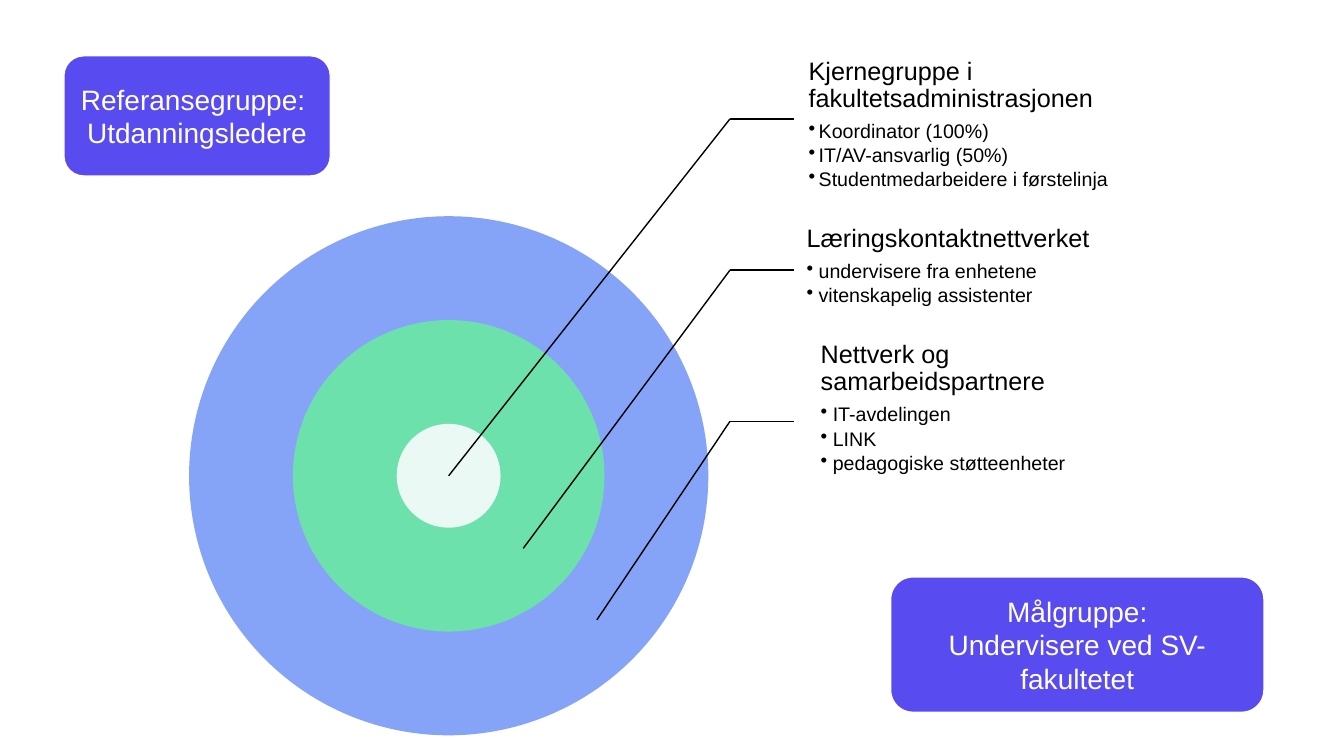
import pptx
import pptx.util
import pptx.dml.color
import pptx.enum.shapes
import pptx.enum.text
import pptx.oxml.ns
import lxml.etree

Inches = pptx.util.Inches
Pt = pptx.util.Pt
RGBColor = pptx.dml.color.RGBColor
Shape = pptx.enum.shapes.MSO_SHAPE
Align = pptx.enum.text.PP_ALIGN
Anchor = pptx.enum.text.MSO_ANCHOR
qn = pptx.oxml.ns.qn

BLACK = RGBColor(0x00, 0x00, 0x00)
WHITE = RGBColor(0xFF, 0xFF, 0xFF)
BLUE = RGBColor(0x86, 0xA4, 0xF7)
GREEN = RGBColor(0x6C, 0xE1, 0xAB)
MINT = RGBColor(0xEA, 0xF9, 0xF3)
VIOLET = RGBColor(0x58, 0x4B, 0xF0)

MID_X, MID_Y = 4.45, 4.72
RINGS = [(5.15, BLUE), (3.09, GREEN), (1.03, MINT)]
BEND, END = 7.24, 7.88

GROUPS = [
    ("Kjernegruppe i fakultetsadministrasjonen",
     ["Koordinator (100%)", "IT/AV-ansvarlig (50%)", "Studentmedarbeidere i førstelinja"],
     (7.88, 0.55, 4.35, 1.5), 0.1, 1.18, (MID_X, MID_Y)),
    ("Læringskontaktnettverket",
     ["undervisere fra enhetene", "vitenskapelig assistenter"],
     (7.86, 2.21, 3.73, 1), 0.12, 2.68, (5.19, 5.44)),
    ("Nettverk og samarbeidspartnere",
     ["IT-avdelingen", "LINK", "pedagogiske støtteenheter"],
     (8, 3.36, 3.24, 1.72), 0.12, 4.18, (5.92, 6.15)),
]

CARDS = [
    (["Referansegruppe: ", "Utdanningsledere"], (0.63, 0.55, 2.65, 1.2)),
    (["Målgruppe:", "Undervisere ved SV-fakultetet"], (8.83, 5.72, 3.71, 1.35)),
]


def write(frame, text, size=18, color=BLACK, align=Align.LEFT,
          first=False, indent=0, pitch=1.0, after=0):
    para = frame.paragraphs[0] if first else frame.add_paragraph()
    para.alignment = align
    para.line_spacing = pitch
    para.space_after = Pt(after)
    if indent:
        para.level = 1
        props = para._p.get_or_add_pPr()
        props.set("marL", str(Inches(indent)))
        props.set("indent", str(-Inches(indent)))
        mark = lxml.etree.SubElement(props, qn("a:buChar"))
        mark.set("char", "•")
    run = para.add_run()
    run.text = text
    run.font.name = "Arial"
    run.font.size = Pt(size)
    run.font.color.rgb = color


def add_form(slide, kind, box, fill):
    form = slide.shapes.add_shape(kind, *map(Inches, box))
    form.shadow.inherit = False
    form.fill.solid()
    form.fill.fore_color.rgb = fill
    form.line.fill.background()
    return form


def add_ring(slide, size, fill):
    box = (MID_X - size / 2, MID_Y - size / 2, size, size)
    add_form(slide, Shape.OVAL, box, fill)


def add_line(slide, start, end):
    line = slide.shapes.add_connector(
        pptx.enum.shapes.MSO_CONNECTOR.STRAIGHT, *map(Inches, start + end))
    line.line.color.rgb = BLACK
    line.line.width = Pt(1)
    lxml.etree.SubElement(line._element.spPr, qn("a:effectLst"))


def add_group(slide, title, items, box, indent, level, target):
    frame = slide.shapes.add_textbox(*map(Inches, box)).text_frame
    frame.word_wrap = True
    frame.margin_left = Inches(0.14)
    frame.margin_top = frame.margin_right = frame.margin_bottom = Inches(0.03)
    write(frame, title, first=True, pitch=0.9, after=6.3)
    for item in items:
        write(frame, item, size=14, indent=indent, pitch=0.9, after=2.1)
    add_line(slide, (BEND, level), (END, level))
    add_line(slide, (BEND, level), target)


def add_card(slide, lines, box):
    card = add_form(slide, Shape.ROUNDED_RECTANGLE, box, VIOLET)
    card.line.color.rgb = WHITE
    card.line.width = Pt(1.5)
    frame = card.text_frame
    frame.word_wrap = True
    frame.vertical_anchor = Anchor.MIDDLE
    for num, text in enumerate(lines):
        write(frame, text, size=20, color=WHITE, align=Align.CENTER, first=num == 0)


def main():
    deck = pptx.Presentation()
    deck.slide_width = Inches(13.33)
    deck.slide_height = Inches(7.5)
    slide = deck.slides.add_slide(deck.slide_layouts[6])
    for ring in RINGS:
        add_ring(slide, *ring)
    for group in GROUPS:
        add_group(slide, *group)
    for card in CARDS:
        add_card(slide, *card)
    deck.save("out.pptx")


if __name__ == "__main__":
    main()
